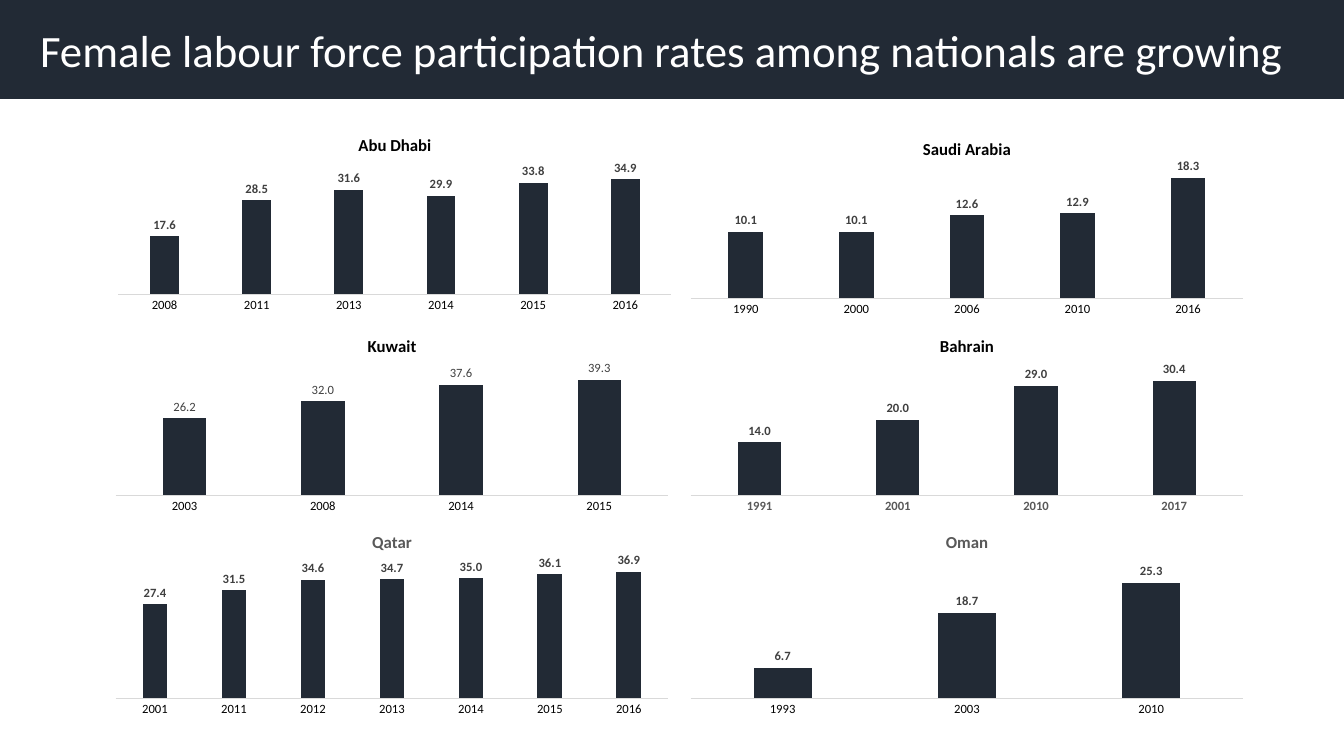
import dataclasses

import lxml.etree
import pptx
import pptx.chart.data
import pptx.dml.color
import pptx.enum.chart
import pptx.enum.text
import pptx.oxml.ns
import pptx.util

PX = 914400 / 100.8
FONT = "Calibri"
NAVY = pptx.dml.color.RGBColor(0x22, 0x2A, 0x35)
WHITE = pptx.dml.color.RGBColor(0xFF, 0xFF, 0xFF)
BLACK = pptx.dml.color.RGBColor(0x00, 0x00, 0x00)
LABEL_GREY = pptx.dml.color.RGBColor(0x40, 0x40, 0x40)
TEXT_GREY = pptx.dml.color.RGBColor(0x59, 0x59, 0x59)
AXIS_GREY = pptx.dml.color.RGBColor(0xD9, 0xD9, 0xD9)

# Plot position as shares of the chart frame
PLOT_LAYOUT = {"x": 0.02, "y": 0.21, "w": 0.96, "h": 0.67}
CHART_WIDTH = 576


@dataclasses.dataclass
class Country:
    name: str
    left: int
    top: int
    height: int
    axis_maximum: int
    rates: dict
    title_color: pptx.dml.color.RGBColor = BLACK
    axis_color: pptx.dml.color.RGBColor = BLACK
    bold_axis: bool = False
    bold_labels: bool = True


COUNTRIES = [
    Country("Abu Dhabi", 107, 121, 197, 40,
            {"2008": 17.6, "2011": 28.5, "2013": 31.6, "2014": 29.9, "2015": 33.8, "2016": 34.9}),
    Country("Saudi Arabia", 679, 125, 197, 20,
            {"1990": 10.1, "2000": 10.1, "2006": 12.6, "2010": 12.9, "2016": 18.3}),
    Country("Kuwait", 104, 322, 197, 45,
            {"2003": 26.2, "2008": 32.0, "2014": 37.6, "2015": 39.3}, bold_labels=False),
    Country("Bahrain", 679, 322, 197, 35,
            {"1991": 14.0, "2001": 20.0, "2010": 29.0, "2017": 30.4},
            axis_color=TEXT_GREY, bold_axis=True),
    Country("Qatar", 104, 518, 205, 40,
            {"2001": 27.4, "2011": 31.5, "2012": 34.6, "2013": 34.7, "2014": 35.0,
             "2015": 36.1, "2016": 36.9}, title_color=TEXT_GREY),
    Country("Oman", 679, 518, 205, 30,
            {"1993": 6.7, "2003": 18.7, "2010": 25.3}, title_color=TEXT_GREY),
]


def px(length):
    return pptx.util.Emu(round(length * PX))


def style_font(font, size, color, bold=False):
    font.name = FONT
    font.size = pptx.util.Pt(size)
    font.bold = bold
    font.color.rgb = color


def add_title(slide, text):
    title = slide.shapes.title
    title.left, title.top, title.width, title.height = px(0), px(0), px(1344), px(99)
    title.fill.solid()
    title.fill.fore_color.rgb = NAVY
    text_frame = title.text_frame
    text_frame.text = text
    text_frame.auto_size = pptx.enum.text.MSO_AUTO_SIZE.NONE
    text_frame.vertical_anchor = pptx.enum.text.MSO_ANCHOR.MIDDLE
    text_frame.margin_left = px(40)
    paragraph = text_frame.paragraphs[0]
    paragraph.alignment = pptx.enum.text.PP_ALIGN.LEFT
    style_font(paragraph.runs[0].font, 32, WHITE)


def place_plot(chart):
    qn = pptx.oxml.ns.qn
    plot_area = chart.element.find(".//" + qn("c:plotArea"))
    for old_layout in plot_area.findall(qn("c:layout")):
        plot_area.remove(old_layout)
    layout = lxml.etree.Element(qn("c:layout"))
    manual = lxml.etree.SubElement(layout, qn("c:manualLayout"))
    settings = {"layoutTarget": "inner", "xMode": "edge", "yMode": "edge", **PLOT_LAYOUT}
    for tag, value in settings.items():
        lxml.etree.SubElement(manual, qn("c:" + tag)).set("val", str(value))
    plot_area.insert(0, layout)


def add_rate_chart(slide, country):
    data = pptx.chart.data.CategoryChartData(number_format="0.0")
    data.categories = list(country.rates)
    data.add_series("Series 1", list(country.rates.values()))
    chart = slide.shapes.add_chart(
        pptx.enum.chart.XL_CHART_TYPE.COLUMN_CLUSTERED,
        px(country.left), px(country.top), px(CHART_WIDTH), px(country.height), data).chart
    style_font(chart.font, 10, BLACK)
    chart.has_legend = False
    place_plot(chart)

    # Chart title
    title_frame = chart.chart_title.text_frame
    title_frame.text = country.name
    style_font(title_frame.paragraphs[0].runs[0].font, 12, country.title_color, True)

    # Axes
    value_axis = chart.value_axis
    value_axis.minimum_scale = 0
    value_axis.maximum_scale = country.axis_maximum
    value_axis.has_major_gridlines = False
    value_axis.visible = False
    category_axis = chart.category_axis
    category_axis.major_tick_mark = pptx.enum.chart.XL_TICK_MARK.NONE
    category_axis.format.line.color.rgb = AXIS_GREY
    category_axis.format.line.width = pptx.util.Pt(0.75)
    style_font(category_axis.tick_labels.font, 9, country.axis_color, country.bold_axis)

    # Columns and their labels
    plot = chart.plots[0]
    plot.gap_width = 219
    plot.overlap = -27
    plot.vary_by_categories = False
    fill = plot.series[0].format.fill
    fill.solid()
    fill.fore_color.rgb = NAVY
    plot.has_data_labels = True
    labels = plot.data_labels
    labels.show_value = True
    labels.number_format = "0.0"
    labels.number_format_is_linked = False
    labels.position = pptx.enum.chart.XL_LABEL_POSITION.OUTSIDE_END
    style_font(labels.font, 9, LABEL_GREY, country.bold_labels)


def main():
    presentation = pptx.Presentation()
    presentation.slide_width, presentation.slide_height = px(1344), px(756)
    slide = presentation.slides.add_slide(presentation.slide_layouts[5])
    add_title(slide, "Female labour force participation rates among nationals are growing")
    for country in COUNTRIES:
        add_rate_chart(slide, country)
    presentation.save("out.pptx")


if __name__ == "__main__":
    main()
